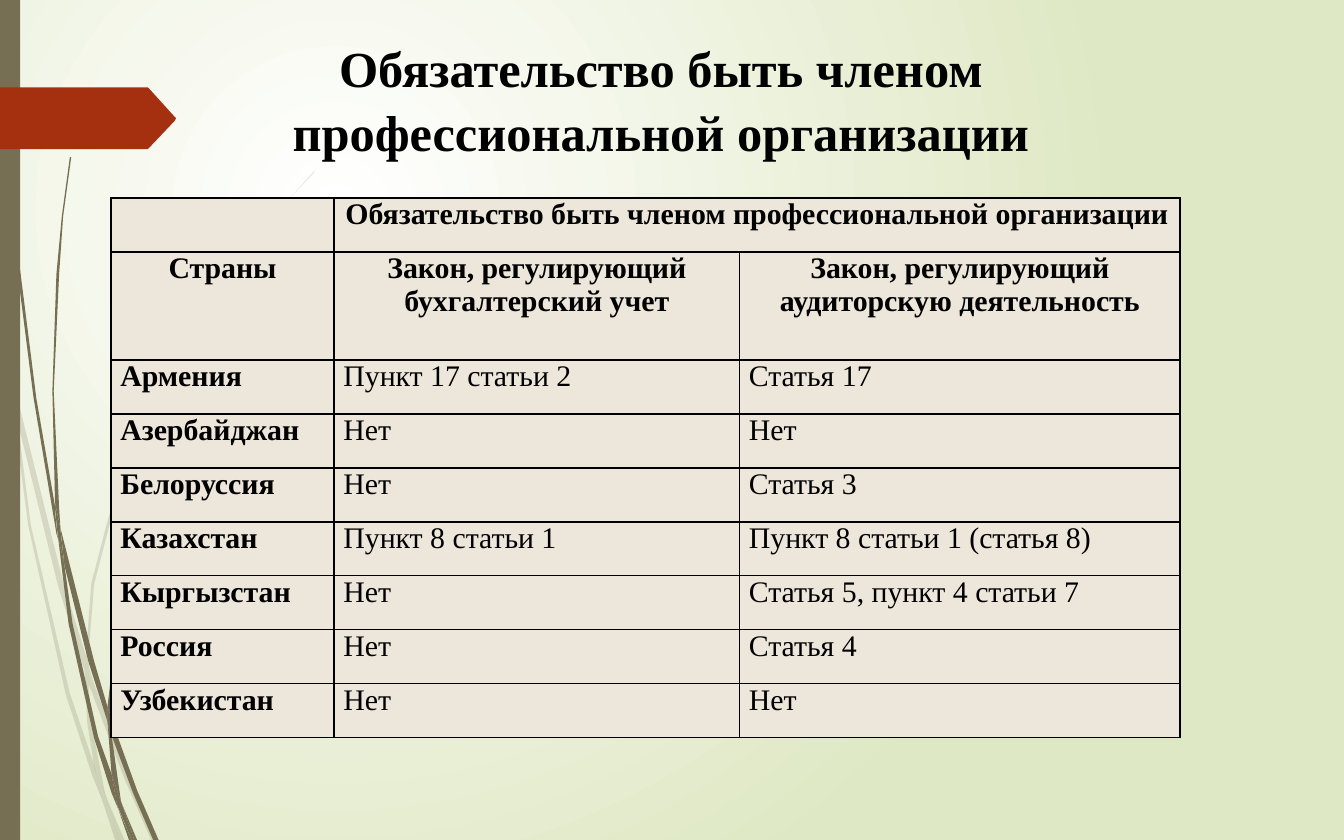
import pptx
import pptx.dml.color
import pptx.enum.shapes
import pptx.enum.text
import pptx.oxml
import pptx.oxml.ns
import pptx.util

Pt = pptx.util.Pt
ALIGN = pptx.enum.text.PP_ALIGN
ANCHOR = pptx.enum.text.MSO_ANCHOR

FONT = "Times New Roman"
BLACK, OLIVE, RUST, SAND = "000000", "766F54", "A53010", "EDE6DB"

# Outlines are (x, y) corners in units of 0.72 pt
UNIT = Pt(0.72)
PALE_GRASS = [
    [(8, 292), (6, 268), (0, 235), (0, 249), (8, 287)],
    [(43, 435), (63, 499), (64, 488), (47, 433), (11, 288), (13, 313)],
    [(69, 506), (66, 496), (66, 509), (92, 578), (113, 626), (116, 626),
     (95, 576)],
    [(89, 626), (93, 626), (79, 593)],
    [(70, 569), (52, 516), (23, 391), (13, 313), (8, 292), (21, 391),
     (49, 517), (69, 578), (76, 595), (74, 589)],
    [(63, 499), (65, 538), (70, 569), (72, 577), (79, 593), (78, 589),
     (68, 538), (66, 509), (66, 507)],
    [(66, 486), (70, 435), (83, 385), (100, 337), (120, 291), (144, 246),
     (171, 204), (201, 165), (217, 146), (234, 128), (234, 127), (217, 146),
     (201, 164), (171, 204), (143, 246), (118, 290), (98, 336), (81, 384),
     (68, 434), (64, 486), (64, 488), (66, 496)],
    [(76, 595), (86, 626), (89, 626)],
    [(66, 507), (66, 509), (66, 496), (64, 488), (63, 499)],
    [(72, 577), (70, 569), (74, 589), (76, 595), (89, 626), (79, 593)],
]
DARK_GRASS = [
    [(5, 91), (12, 194), (25, 296), (42, 397), (43, 401), (41, 381),
     (41, 377), (27, 296), (14, 193), (6, 91), (3, 40), (3, 0), (2, 0),
     (3, 40)],
    [(66, 493), (80, 537), (80, 528), (80, 526), (70, 492), (45, 393),
     (48, 421)],
    [(85, 541), (83, 534), (83, 547), (99, 590), (114, 625), (118, 625),
     (102, 588)],
    [(83, 576), (73, 548), (54, 464), (48, 421), (43, 398), (51, 464),
     (70, 549), (83, 590), (88, 602), (87, 598)],
    [(45, 393), (44, 378), (40, 291), (44, 204), (47, 161), (53, 117),
     (52, 117), (46, 161), (42, 204), (39, 291), (41, 374)],
    [(100, 625), (102, 625), (91, 599)],
    [(43, 398), (48, 421), (45, 394), (45, 393), (41, 374), (41, 378)],
    [(83, 528), (86, 494), (94, 460), (105, 428), (119, 397), (135, 367),
     (153, 339), (173, 312), (184, 299), (196, 287), (195, 287), (184, 298),
     (173, 311), (153, 338), (134, 366), (117, 395), (103, 426), (92, 459),
     (84, 492), (80, 526), (83, 534)],
    [(88, 602), (96, 625), (98, 625)],
    [(80, 537), (83, 576), (87, 588), (91, 599), (90, 596), (83, 547),
     (81, 542)],
    [(80, 537), (81, 542), (83, 547), (83, 534), (80, 526), (80, 528)],
    [(87, 588), (83, 576), (87, 598), (88, 601), (98, 625), (100, 625),
     (91, 599)],
]
PAGE_TAG = [(130, 90), (111, 110), (110, 111), (0, 111), (0, 65), (110, 65),
            (111, 66), (130, 87), (131, 88)]

HEADING = "Обязательство быть членом профессиональной организации"
LAW_ROWS = [
    ("", HEADING, ""),
    ("Страны", "Закон, регулирующий бухгалтерский учет",
     "Закон, регулирующий аудиторскую деятельность"),
    ("Армения", "Пункт 17 статьи 2", "Статья 17"),
    ("Азербайджан", "Нет", "Нет"),
    ("Белоруссия", "Нет", "Статья 3"),
    ("Казахстан", "Пункт 8 статьи 1", "Пункт 8 статьи 1 (статья 8)"),
    ("Кыргызстан", "Нет", "Статья 5, пункт 4 статьи 7"),
    ("Россия", "Нет", "Статья 4"),
    ("Узбекистан", "Нет", "Нет"),
]
HEADER_ROWS = 2
COLUMN_WIDTHS = (119.5, 217.25, 236)
ROW_HEIGHT = 28.93


def color(hex_string):
    return pptx.dml.color.RGBColor.from_string(hex_string)


def paint(shape, fill):
    shape.shadow.inherit = False
    shape.fill.solid()
    shape.fill.fore_color.rgb = color(fill)
    shape.line.fill.background()


def add_outline(slide, corners, fill, opacity=100):
    builder = slide.shapes.build_freeform(*corners[0], scale=UNIT)
    builder.add_line_segments(corners[1:], close=True)
    outline = builder.convert_to_shape()
    paint(outline, fill)
    if opacity < 100:
        tint = outline.fill._xPr.find(".//" + pptx.oxml.ns.qn("a:srgbClr"))
        tint.append(pptx.oxml.parse_xml(
            f'<a:alpha {pptx.oxml.ns.nsdecls("a")} val="{opacity * 1000}"/>'))


def add_run(paragraph, text, size, bold):
    run = paragraph.add_run()
    run.text = text
    run.font.name = FONT
    run.font.size = Pt(size)
    run.font.bold = bold
    run.font.color.rgb = color(BLACK)


def set_background(slide):
    fill = slide.background.fill
    fill.gradient()
    for stop, shade in zip(fill.gradient_stops, ("FFFFFF", "DFE8C4")):
        stop.color.rgb = color(shade)
    # Radial glow centred in the upper left quarter
    linear = slide.element.find(".//" + pptx.oxml.ns.qn("a:lin"))
    linear.getparent().replace(linear, pptx.oxml.parse_xml(
        f'<a:path {pptx.oxml.ns.nsdecls("a")} path="circle"><a:fillToRect '
        'l="50000" t="50000" r="100000" b="100000"/></a:path>'))


def add_title(slide):
    title = slide.shapes.add_textbox(Pt(60), Pt(15), Pt(588), Pt(75))
    frame = title.text_frame
    frame.word_wrap = True
    frame.vertical_anchor = ANCHOR.MIDDLE
    paragraph = frame.paragraphs[0]
    paragraph.alignment = ALIGN.CENTER
    paragraph.line_spacing = 1.05
    add_run(paragraph, HEADING, 27, True)


def add_borders(cell):
    properties = cell._tc.get_or_add_tcPr()
    for index, side in enumerate(("lnL", "lnR", "lnT", "lnB")):
        properties.insert(index, pptx.oxml.parse_xml(
            f'<a:{side} {pptx.oxml.ns.nsdecls("a")} w="{Pt(1)}"><a:solidFill>'
            f'<a:srgbClr val="{BLACK}"/></a:solidFill></a:{side}>'))


def fill_cell(cell, text, header, bold):
    cell.fill.solid()
    cell.fill.fore_color.rgb = color(SAND)
    cell.margin_left = cell.margin_right = Pt(5)
    cell.margin_top = cell.margin_bottom = 0
    add_borders(cell)
    if text:
        paragraph = cell.text_frame.paragraphs[0]
        paragraph.alignment = ALIGN.CENTER if header else ALIGN.LEFT
        add_run(paragraph, text, 16, bold)


def add_law_table(slide):
    heights = [ROW_HEIGHT] * len(LAW_ROWS)
    heights[1] *= 2
    laws = slide.shapes.add_table(
        len(LAW_ROWS), len(COLUMN_WIDTHS), Pt(59.5), Pt(106),
        Pt(sum(COLUMN_WIDTHS)), Pt(sum(heights))).table
    for column, width in zip(laws.columns, COLUMN_WIDTHS):
        column.width = Pt(width)
    for row, height in zip(laws.rows, heights):
        row.height = Pt(height)
    for r, texts in enumerate(LAW_ROWS):
        for c, text in enumerate(texts):
            header = r < HEADER_ROWS
            fill_cell(laws.cell(r, c), text, header, header or c == 0)
    laws.cell(0, 1).merge(laws.cell(0, 2))


def main():
    deck = pptx.Presentation()
    deck.slide_width, deck.slide_height = Pt(720), Pt(450)
    slide = deck.slides.add_slide(deck.slide_layouts[6])
    set_background(slide)

    # Grass, side bar and page tag
    for blade in PALE_GRASS:
        add_outline(slide, blade, OLIVE, opacity=20)
    for blade in DARK_GRASS:
        add_outline(slide, blade, OLIVE)
    side_bar = slide.shapes.add_shape(
        pptx.enum.shapes.MSO_SHAPE.RECTANGLE, 0, 0, Pt(10.8), Pt(450))
    paint(side_bar, OLIVE)
    add_outline(slide, PAGE_TAG, RUST)

    # Content
    add_title(slide)
    add_law_table(slide)
    deck.save("out.pptx")


if __name__ == "__main__":
    main()
